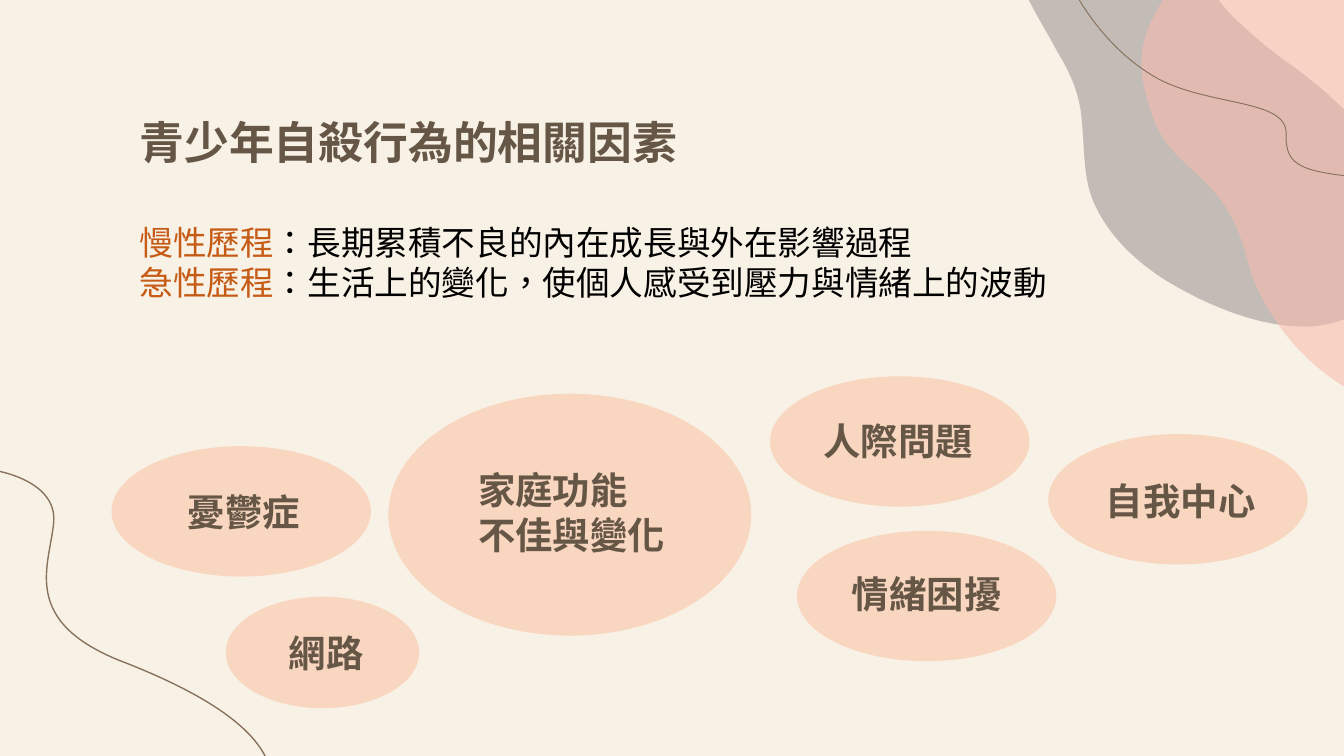
from itertools import chain
from lxml.etree import SubElement
from pptx import Presentation
from pptx.dml.color import RGBColor
from pptx.enum.shapes import MSO_SHAPE as Shape
from pptx.oxml.ns import qn
from pptx.util import Inches, Pt

THEME = {
    "paper": "F8F1E5", "bubble": "F8D6C0", "brown": "655646",
    "accent": "C65B16", "ink": "000000", "stroke": "87725D",
    "grey": "8F8688", "pink": "F7BCAF",
    "heading_font": "Noto Sans CJK TC", "body_font": "Arial",
    # (type size, line height) in points
    "title": (24, 29.5), "body": (18, 21.5), "label": (20, 24),
}

# Content: all places and sizes in grid columns (100 across the slide)
TITLE = "青少年自殺行為的相關因素"
PROCESSES = [
    ("慢性歷程", "：長期累積不良的內在成長與外在影響過程"),
    ("急性歷程", "：生活上的變化，使個人感受到壓力與情緒上的波動"),
]
SMALL, MEDIUM, LARGE = (14.4, 8.3), (19.3, 9.7), (27, 18)
FACTORS = [  # lines, bubble corner, bubble size, label corner, label width
    (["憂鬱症"], (8.3, 33.2), MEDIUM, (13, 35.9), 12.9),
    (["家庭功能", "不佳與變化"], (28.9, 29.3), LARGE, (34.6, 34.3), 17),
    (["人際問題"], (57.3, 28), MEDIUM, (60.3, 30.6), 14.4),
    (["情緒困擾"], (59.3, 39.5), MEDIUM, (62.4, 42), 14.9),
    (["自我中心"], (78, 32.3), MEDIUM, (81.3, 35.1), 15.5),
    (["網路"], (16.8, 44.4), SMALL, (20.5, 46.4), 12.9),
]

# Decoration: a start point, then cubic curves (two handles and an end)
BLOBS = [
    ("grey", 50, (104.7, 16.7), [
        (104.5, 11.9, 100, 7.8, 96.3, 5), (94.8, 4, 93.4, 2.8, 92.1, 1.6),
        (90.7, 0.3, 89.7, -1.4, 88.6, -3), (86.7, -5.5, 84.4, -8.4, 81.1, -9.1),
        (78.4, -9.6, 75.6, -8, 75.3, -5.1), (75.3, -4.8, 75.3, -4.5, 75.3, -4.2),
        (75.4, -1.3, 77.4, 1.4, 78.7, 3.9), (79.7, 5.5, 80.4, 7.2, 80.5, 9.1),
        (80.7, 11, 80.6, 12.9, 81.2, 14.6), (82.2, 17.3, 84.4, 19.4, 86.8, 20.9),
        (89.8, 22.7, 93.7, 24.4, 97.4, 24.3), (99.7, 24.2, 102, 23.1, 103.3, 21.3),
        (103.4, 21.2, 103.6, 21, 103.7, 20.9), (104.5, 19.4, 104.8, 18, 104.7, 16.7),
    ]),
    ("pink", 58, (85, 3.9), [
        (84.8, 5.3, 85.1, 6.7, 85.8, 8.8), (87.4, 13, 91.2, 12.8, 92.8, 19.3),
        (93.2, 20.8, 93.8, 22.2, 94.7, 23.5), (96.3, 26.1, 98.7, 28.2, 101.5, 29.6),
        (101.7, 29.7, 101.9, 29.7, 102, 29.6), (104, 30.2, 106, 30.2, 107.7, 28.7),
        (109.3, 27.3, 110.1, 25.4, 110.3, 23.4), (110.4, 22.6, 110.5, 21.7, 110.4, 20.9),
        (110.1, 17.4, 108.4, 14.3, 106.9, 11.2), (105.4, 8.1, 104, 4.9, 102.2, 2),
        (99.7, -1.8, 93, -9.8, 88.8, -3.4), (86.5, 0, 85.2, 1.8, 85, 3.9),
    ]),
]
STROKES = [
    (0.5, (79.6, -1.3), [
        (79.6, -1.3, 81.5, 2.9, 85.4, 5.4), (89.2, 8, 95.7, 7.2, 95.7, 9.9),
        (95.6, 12.5, 96.9, 12.8, 102.2, 13.3)]),
    (0.75, (-0.4, 35), [
        (-0.4, 35, 4.3, 35.7, 4, 38.9), (3.7, 42.1, 1.4, 46.3, 9.3, 49.3),
        (17.2, 52.4, 19.4, 55.1, 20, 56.9)]),
]

deck = Presentation()
deck.slide_width = Inches(10)
deck.slide_height = deck.slide_width * 9 // 16
COLUMN = deck.slide_width / 100
slide = deck.slides.add_slide(deck.slide_layouts[6])


def color(name):
    return RGBColor.from_string(THEME[name])


def grid(*lengths):
    return [round(length * COLUMN) for length in lengths]


def paint(shape, name):
    shape.shadow.inherit = False
    shape.fill.solid()
    shape.fill.fore_color.rgb = color(name)
    shape.line.fill.background()


def add_curve(start, curves, closed):
    values = grid(*chain.from_iterable(curves))
    builder = slide.shapes.build_freeform(*grid(*start))
    builder.add_line_segments(list(zip(values[::2], values[1::2])), close=closed)
    curve = builder.convert_to_shape()
    # Every three straight segments become one cubic curve
    segments = list(curve._element.iter(qn("a:lnTo")))
    for first, second, end in zip(*[iter(segments)] * 3):
        first.tag = qn("a:cubicBezTo")
        for segment in (second, end):
            first.append(segment[0])
            segment.getparent().remove(segment)
    return curve


def add_text(place, lines, style, font, bold=False, inset=0.05):
    """Each line is a list of (text, colour name) runs."""
    frame = slide.shapes.add_textbox(*grid(*place)).text_frame
    frame.word_wrap = True
    frame.margin_top = frame.margin_bottom = Inches(inset)
    size, leading = THEME[style]
    for number, line in enumerate(lines):
        paragraph = frame.add_paragraph() if number else frame.paragraphs[0]
        paragraph.line_spacing = Pt(leading)
        for text, tint in line:
            run = paragraph.add_run()
            run.text = text
            run.font.size, run.font.bold = Pt(size), bold
            run.font.color.rgb = color(tint)
            run.font.name = THEME[font]
            run.font._element.set("lang", "zh-TW")
            SubElement(run.font._element, qn("a:ea"), typeface=THEME[font])


# Background and decoration
slide.background.fill.solid()
slide.background.fill.fore_color.rgb = color("paper")
for tint, opacity, start, curves in BLOBS:
    blob = add_curve(start, curves, True)
    paint(blob, tint)
    swatch = blob.fill._xPr.find(".//" + qn("a:srgbClr"))
    SubElement(swatch, qn("a:alpha"), val=str(opacity * 1000))
for width, start, curves in STROKES:
    stroke = add_curve(start, curves, False)
    stroke.shadow.inherit = False
    stroke.fill.background()
    stroke.line.color.rgb = color("stroke")
    stroke.line.width = Pt(width)

# Title and the two processes
add_text((9.4, 7.4, 84.4, 5.1), [[(TITLE, "brown")]], "title", "heading_font",
         bold=True, inset=0.1)
add_text((9.4, 16, 71.3, 7.1),
         [[(term, "accent"), (meaning, "ink")] for term, meaning in PROCESSES],
         "body", "body_font")

# Factor bubbles with their labels
for lines, corner, size, label_corner, label_width in FACTORS:
    paint(slide.shapes.add_shape(Shape.OVAL, *grid(*corner, *size)), "bubble")
    label_height = 1.1 + 3.3 * len(lines)
    add_text((*label_corner, label_width, label_height),
             [[(line, "brown")] for line in lines], "label", "heading_font", bold=True)

deck.save("out.pptx")
